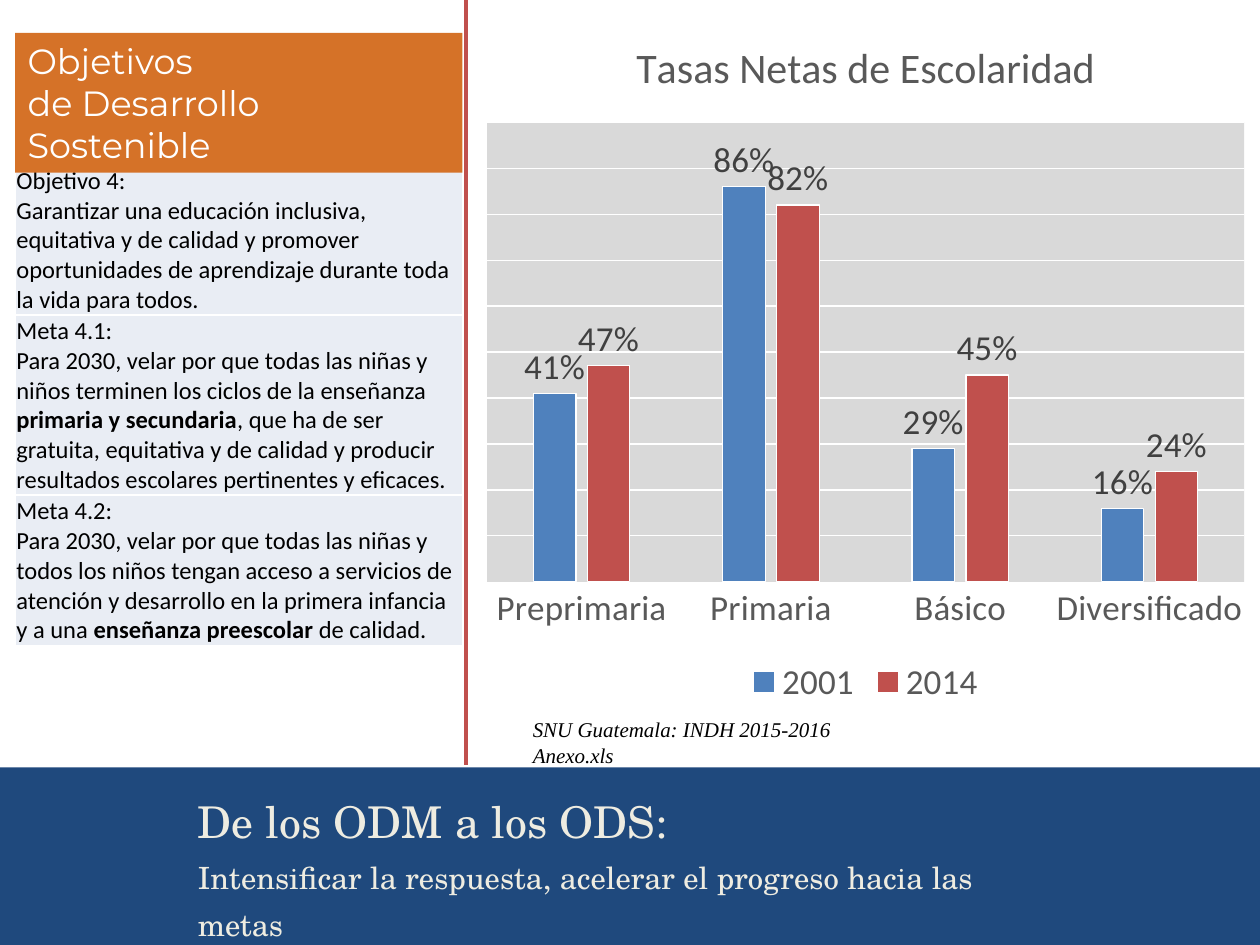
from dataclasses import dataclass
from typing import NamedTuple

import pptx
import pptx.chart.data
import pptx.dml.color
import pptx.enum.chart
import pptx.enum.shapes
import pptx.enum.text
import pptx.oxml
import pptx.oxml.ns
import pptx.util

Pt = pptx.util.Pt
ANCHOR = pptx.enum.text.MSO_ANCHOR
AUTO = pptx.enum.text.MSO_AUTO_SIZE
LEFT = pptx.enum.text.PP_ALIGN.LEFT
RGB = pptx.dml.color.RGBColor.from_string
NS = pptx.oxml.ns.nsdecls("a", "c")
WIDTH, HEIGHT = pptx.util.Inches(10), pptx.util.Inches(7.5)


@dataclass(frozen=True)
class Theme:
    band: str = "1F497D"
    cream: str = "EEECE1"
    orange: str = "D57228"
    cell: str = "E9EDF4"
    white: str = "FFFFFF"
    black: str = "000000"
    blue: str = "4F81BD"
    red: str = "C0504D"
    plot: str = "D9D9D9"
    gray: str = "595959"
    label: str = "404040"
    sans: str = "Calibri"
    heading: str = "Montserrat"
    serif: str = "TeX Gyre Schola"
    source: str = "Times New Roman"
    banner_size: float = 25
    subtitle_size: float = 17.5
    heading_size: float = 20
    cell_size: float = 14
    source_size: float = 12
    chart_size: float = 20
    chart_title_size: float = 24


class Box(NamedTuple):
    """Left, top, width and height in percent of the slide."""
    x: float
    y: float
    w: float
    h: float

    def emu(self) -> tuple[int, ...]:
        return tuple(round(v * size / 100)
                     for v, size in zip(self, (WIDTH, HEIGHT) * 2))


class Goal(NamedTuple):
    height: float
    name: str
    phrases: tuple[str, ...]  # every second phrase is bold


class Series(NamedTuple):
    name: str
    values: tuple[float, ...]
    color: str


T = Theme()
BAND = Box(0, 81.2, 100, 18.8)
BANNER = Box(14.7, 82.27, 70.8, 17.73)
HEADING = Box(1.2, 3.47, 35.5, 14.8)
GOALS = Box(1.2, 13.73, 35.5, 54.4)
CHART = Box(37.4, 1.2, 62.6, 74)
DIVIDER = Box(37, 0, 0, 80.93)
SOURCE = Box(41.3, 75.2, 31.1, 6.67)

GOAL_ROWS = (
    Goal(19.6, "Objetivo 4:", (
        "Garantizar una educación inclusiva, equitativa y de calidad y promover "
        "oportunidades de aprendizaje durante toda la vida para todos.",)),
    Goal(19, "Meta 4.1:", (
        "Para 2030, velar por que todas las niñas y niños terminen los ciclos "
        "de la enseñanza ", "primaria y secundaria",
        ", que ha de ser gratuita, equitativa y de calidad y producir "
        "resultados escolares pertinentes y eficaces.")),
    Goal(15.8, "Meta 4.2:", (
        "Para 2030, velar por que todas las niñas y todos los niños tengan "
        "acceso a servicios de atención y desarrollo en la primera infancia "
        "y a una ", "enseñanza preescolar ", "de calidad.")),
)
LEVELS = ("Preprimaria", "Primaria", "Básico", "Diversificado")
RATES = (Series("2001", (0.41, 0.86, 0.29, 0.16), T.blue),
         Series("2014", (0.47, 0.82, 0.45, 0.24), T.red))


def assign(obj, **values) -> None:
    for name, value in values.items():
        setattr(obj, name, value)


def set_font(font, size: float, name: str, color: str, **extra) -> None:
    assign(font, size=Pt(size), name=name, **extra)
    font.color.rgb = RGB(color)


def set_line(line, color: str, width: float) -> None:
    line.color.rgb = RGB(color)
    line.width = Pt(width)


def paragraph(tf, index: int):
    return tf.paragraphs[0] if index == 0 else tf.add_paragraph()


def add_rect(slide, box: Box, color: str):
    s = slide.shapes.add_shape(pptx.enum.shapes.MSO_SHAPE.RECTANGLE, *box.emu())
    s.shadow.inherit = False
    s.fill.solid()
    s.fill.fore_color.rgb = RGB(color)
    s.line.fill.background()
    return s


def add_banner(slide) -> None:
    sp = slide.placeholders[1]
    assign(sp, **dict(zip(("left", "top", "width", "height"), BANNER.emu())))
    assign(sp.text_frame, vertical_anchor=ANCHOR.MIDDLE, auto_size=AUTO.NONE, word_wrap=True)
    lines = (("De los ODM a los ODS:", T.banner_size),
             ("Intensificar la respuesta, acelerar el progreso hacia las metas",
              T.subtitle_size))
    for i, (text, size) in enumerate(lines):
        p = paragraph(sp.text_frame, i)
        assign(p, line_spacing=1.3, space_before=Pt(0), alignment=LEFT)
        r = p.add_run()
        r.text = text
        set_font(r.font, size, T.serif, T.cream)


def add_heading(slide) -> None:
    s = add_rect(slide, HEADING, T.orange)
    s.text_frame.word_wrap = True
    for i, text in enumerate(("Objetivos", "de Desarrollo Sostenible")):
        p = paragraph(s.text_frame, i)
        p.alignment = LEFT
        r = p.add_run()
        r.text = text
        set_font(r.font, T.heading_size, T.heading, T.white)


def border_cell(cell) -> None:
    props = cell._tc.get_or_add_tcPr()
    for i, side in enumerate(("lnL", "lnR", "lnT", "lnB")):
        props.insert(i, pptx.oxml.parse_xml(
            f'<a:{side} {NS} w="12700"><a:solidFill><a:srgbClr val="{T.white}"/>'
            f'</a:solidFill></a:{side}>'))


def add_goals(slide) -> None:
    table = slide.shapes.add_table(len(GOAL_ROWS), 1, *GOALS.emu()).table
    assign(table, first_row=False, horz_banding=False)
    inset = pptx.util.Inches(0.01)
    for i, goal in enumerate(GOAL_ROWS):
        table.rows[i].height = round(goal.height * HEIGHT / 100)
        cell = table.cell(i, 0)
        assign(cell, vertical_anchor=ANCHOR.BOTTOM, margin_left=inset,
               margin_right=inset, margin_top=inset, margin_bottom=0)
        cell.fill.solid()
        cell.fill.fore_color.rgb = RGB(T.cell)
        border_cell(cell)
        for j, phrases in enumerate(((goal.name,), goal.phrases)):
            p = paragraph(cell.text_frame, j)
            for k, text in enumerate(phrases):
                r = p.add_run()
                r.text = text
                set_font(r.font, T.cell_size, T.sans, T.black, bold=k % 2 == 1)


def add_rates_chart(slide) -> None:
    enum = pptx.enum.chart
    data = pptx.chart.data.CategoryChartData(number_format="0%")
    data.categories = LEVELS
    for rate in RATES:
        data.add_series(rate.name, rate.values)
    chart = slide.shapes.add_chart(
        enum.XL_CHART_TYPE.COLUMN_CLUSTERED, *CHART.emu(), data).chart
    set_font(chart.font, T.chart_size, T.sans, T.black)
    chart.has_title = True
    p = chart.chart_title.text_frame.paragraphs[0]
    r = p.add_run()
    r.text = "Tasas Netas de Escolaridad"
    set_font(r.font, T.chart_title_size, T.sans, T.gray, bold=False)
    chart.has_legend = True
    assign(chart.legend, position=enum.XL_LEGEND_POSITION.BOTTOM, include_in_layout=False)
    set_font(chart.legend.font, T.chart_size, T.sans, T.gray)

    axis = chart.category_axis
    axis.major_tick_mark = enum.XL_TICK_MARK.NONE
    set_font(axis.tick_labels.font, T.chart_size, T.sans, T.gray)
    set_line(axis.format.line, T.plot, 0.75)
    assign(chart.value_axis, visible=False, minimum_scale=0, maximum_scale=1,
           major_unit=0.1, has_major_gridlines=True)
    set_line(chart.value_axis.major_gridlines.format.line, T.white, 0.75)

    plot = chart.plots[0]
    assign(plot, gap_width=219, overlap=-27, vary_by_categories=False)
    for series, rate in zip(plot.series, RATES):
        series.format.fill.solid()
        series.format.fill.fore_color.rgb = RGB(rate.color)
        set_line(series.format.line, T.white, 0.75)
        labels = series.data_labels
        assign(labels, show_value=True, number_format="0%", number_format_is_linked=False,
               position=enum.XL_LABEL_POSITION.OUTSIDE_END)
        set_font(labels.font, T.chart_size, T.sans, T.label)
    chart._chartSpace.chart.plotArea.append(pptx.oxml.parse_xml(
        f'<c:spPr {NS}><a:solidFill><a:srgbClr val="{T.plot}"/></a:solidFill></c:spPr>'))


def add_divider(slide) -> None:
    x, y, w, h = DIVIDER.emu()
    line = slide.shapes.add_connector(
        pptx.enum.shapes.MSO_CONNECTOR.STRAIGHT, x, y, x + w, y + h)
    set_line(line.line, T.red, 2.25)
    line._element.spPr.append(pptx.oxml.parse_xml(f"<a:effectLst {NS}/>"))


def add_source(slide) -> None:
    tf = slide.shapes.add_textbox(*SOURCE.emu()).text_frame
    tf.word_wrap = True
    r = tf.paragraphs[0].add_run()
    r.text = "SNU Guatemala: INDH 2015-2016 Anexo.xls"
    set_font(r.font, T.source_size, T.source, T.black, italic=True)


def main() -> None:
    prs = pptx.Presentation()
    assign(prs, slide_width=WIDTH, slide_height=HEIGHT)
    slide = prs.slides.add_slide(prs.slide_layouts.get_by_name("Section Header"))
    title = slide.shapes.title._element
    title.getparent().remove(title)
    band = add_rect(slide, BAND, T.band)
    slide.shapes._spTree.insert(2, band._element)  # behind the banner text
    for draw in (add_banner, add_goals, add_rates_chart, add_heading,
                 add_divider, add_source):
        draw(slide)
    prs.save("out.pptx")


if __name__ == "__main__":
    main()
